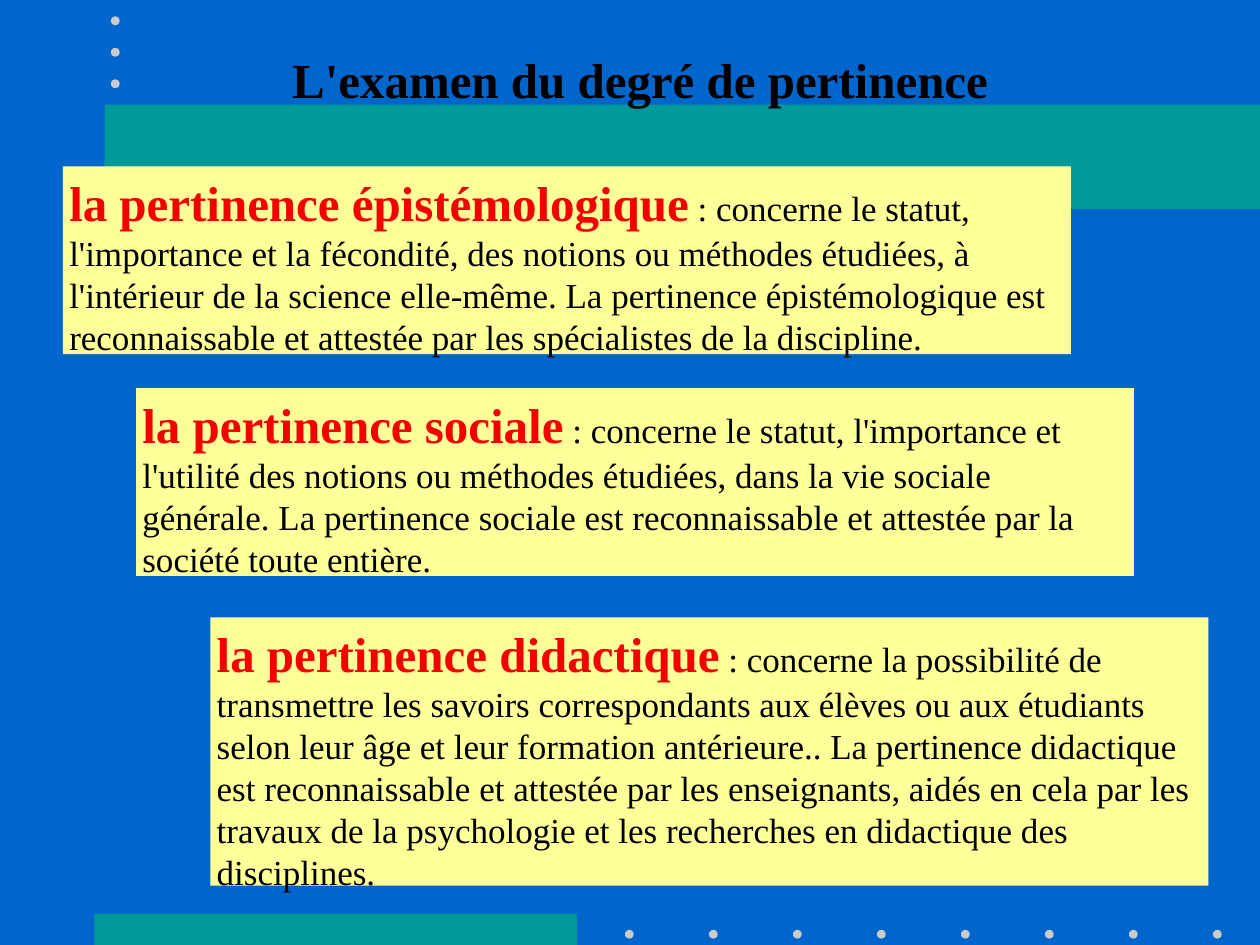
import pptx
import pptx.dml.color
import pptx.enum.shapes
import pptx.enum.text
import pptx.util

Inches = pptx.util.Inches
FONT = "Times New Roman"
TEAL, GREY, YELLOW, RED, BLACK = "009999", "CBCBCB", "FFFF99", "F40000", "000000"

DEFINITIONS = [
    ((0.5, 1.32, 8, 1.49), "la pertinence épistémologique",
     " : concerne le statut, l'importance et la fécondité, des notions ou méthodes étudiées, "
     "à l'intérieur de la science elle-même. La pertinence épistémologique est reconnaissable "
     "et attestée par les spécialistes de la discipline."),
    ((1.08, 3.08, 7.92, 1.49), "la pertinence sociale",
     " : concerne le statut, l'importance et l'utilité des notions ou méthodes étudiées, "
     "dans la vie sociale générale. La pertinence sociale est reconnaissable et attestée "
     "par la société toute entière."),
    ((1.67, 4.9, 7.92, 2.13), "la pertinence didactique",
     " : concerne la possibilité de transmettre les savoirs correspondants aux élèves ou aux "
     "étudiants selon leur âge et leur formation antérieure.. La pertinence didactique est "
     "reconnaissable et attestée par les enseignants, aidés en cela par les travaux de la "
     "psychologie et les recherches en didactique des disciplines."),
]


def set_fill(fill, color):
    fill.solid()
    fill.fore_color.rgb = pptx.dml.color.RGBColor.from_string(color)


def add_plain_shape(shapes, kind, box, color):
    shape = shapes.add_shape(kind, *map(Inches, box))
    shape.shadow.inherit = False
    set_fill(shape.fill, color)
    shape.line.fill.background()
    return shape


def add_rectangle(shapes, box, color):
    return add_plain_shape(shapes, pptx.enum.shapes.MSO_SHAPE.RECTANGLE, box, color)


def add_dots(slide, left, top, count, step_x, step_y):
    group = slide.shapes.add_group_shape()
    for index in range(count):
        box = (left + index * step_x, top + index * step_y, 0.07, 0.07)
        add_plain_shape(group.shapes, pptx.enum.shapes.MSO_SHAPE.OVAL, box, GREY)


def prepare_text(shape, alignment):
    frame = shape.text_frame
    frame.word_wrap = True
    frame.auto_size = pptx.enum.text.MSO_AUTO_SIZE.NONE
    frame.vertical_anchor = pptx.enum.text.MSO_ANCHOR.TOP
    frame.margin_left = frame.margin_right = Inches(0.05)
    frame.margin_top = frame.margin_bottom = Inches(0.05)
    paragraph = frame.paragraphs[0]
    paragraph.alignment = alignment
    return paragraph


def add_run(paragraph, text, size, color, bold):
    run = paragraph.add_run()
    run.text = text
    run.font.name = FONT
    run.font.size = pptx.util.Pt(size)
    run.font.bold = bold
    set_fill(run.font.fill, color)


def add_decoration(slide):
    add_rectangle(slide.shapes, (0.75, 7.25, 3.83, 0.25), TEAL)
    add_rectangle(slide.shapes, (0.83, 0.83, 9.17, 0.83), TEAL)
    add_dots(slide, 4.96, 7.38, 8, 2 / 3, 0)
    add_dots(slide, 0.88, 0.13, 3, 0, 0.25)


def place_title(slide, box, text):
    title = slide.shapes.title
    title.left, title.top, title.width, title.height = map(Inches, box)
    paragraph = prepare_text(title, pptx.enum.text.PP_ALIGN.CENTER)
    add_run(paragraph, text, 28, BLACK, True)
    title.element.getparent().append(title.element)


def add_definition(slide, box, term, explanation):
    shape = add_rectangle(slide.shapes, box, YELLOW)
    paragraph = prepare_text(shape, pptx.enum.text.PP_ALIGN.LEFT)
    add_run(paragraph, term, 28, RED, True)
    add_run(paragraph, explanation, 20, BLACK, False)


def main():
    presentation = pptx.Presentation()
    presentation.slide_width = Inches(10)
    presentation.slide_height = Inches(7.5)
    slide = presentation.slides.add_slide(presentation.slide_layouts.get_by_name("Title Only"))
    set_fill(slide.background.fill, "0066CC")
    add_decoration(slide)
    place_title(slide, (0.33, 0.34, 9.5, 0.53), "L'examen du degré de pertinence")
    for box, term, explanation in DEFINITIONS:
        add_definition(slide, box, term, explanation)
    presentation.save("out.pptx")


if __name__ == "__main__":
    main()
